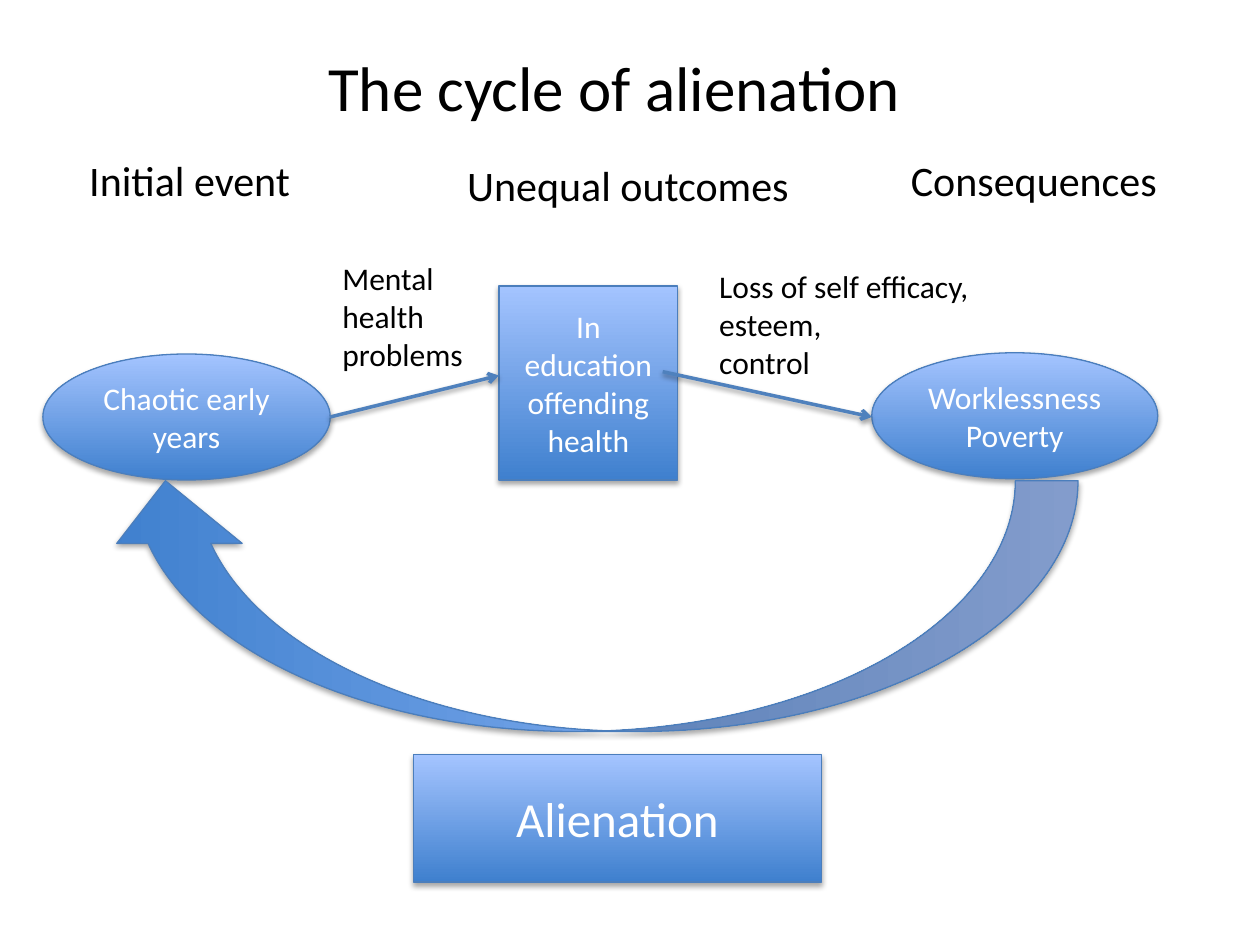
"""Build the slide on the cycle of alienation."""
from lxml.etree import SubElement
from pptx import Presentation
from pptx.dml.color import RGBColor
from pptx.enum.shapes import MSO_CONNECTOR, MSO_SHAPE
from pptx.enum.text import MSO_ANCHOR, PP_ALIGN
from pptx.oxml.ns import qn
from pptx.util import Pt

COLORS = {"text": "000000", "label": "FFFFFF", "dark": "3F80CE", "light": "A4C4FF",
          "outline": "4B7EBC", "link": "4F81BD", "shadow": "000000"}
FONT = "Calibri"

TITLE = ("The cycle of alienation", (36, 4.3, 648, 90))
HEADINGS = [
    ("Initial event", (43.9, 85, 131, 36)),
    ("Unequal outcomes", (259.9, 87.8, 200.9, 36)),
    ("Consequences", (513.4, 85, 160.6, 36)),
]
CAUSES = [
    (["Mental health problems"], (188.6, 144.7, 83.5, 72.7)),
    (["Loss of self efficacy, esteem,", "control"], (403.9, 149, 171.4, 72.7)),
]
STAGES = [
    (MSO_SHAPE.OVAL, ["Worklessness\vPoverty"], 18, (498.2, 201.6, 163.4, 72)),
    (MSO_SHAPE.RECTANGLE, ["In education offending", "health"], 18, (285.1, 163.4, 102.2, 110.9)),
    (MSO_SHAPE.OVAL, ["Chaotic early years"], 18, (24.5, 202.3, 164.2, 72)),
    (MSO_SHAPE.RECTANGLE, ["Alienation"], 28, (236.2, 431.3, 233.3, 72.7)),
]
RETURN_ARROW = (265.7, 67.7, 143.3, 557.3)
LINKS = [(378.7, 212.4, 498.2, 238.3), (188.6, 238.3, 285.1, 214.6)]


def points(values):
    return [Pt(value) for value in values]


def color(name):
    return RGBColor.from_string(COLORS[name])


def write(frame, paragraphs, size=18, fill="text", align=PP_ALIGN.LEFT, anchor=MSO_ANCHOR.TOP):
    frame.word_wrap = True
    frame.vertical_anchor = anchor
    for index, content in enumerate(paragraphs):
        paragraph = frame.add_paragraph() if index else frame.paragraphs[0]
        paragraph.text = content
        paragraph.alignment = align
        for run in paragraph.runs:
            run.font.name = FONT
            run.font.size = Pt(size)
            run.font.color.rgb = color(fill)


def add_text(slide, paragraphs, box, **style):
    frame = slide.shapes.add_textbox(*points(box)).text_frame
    write(frame, paragraphs, **style)
    return frame


def add_shadow(shape, distance, opacity):
    effects = SubElement(shape.element.spPr, qn("a:effectLst"))
    outer = SubElement(effects, qn("a:outerShdw"), blurRad=str(Pt(3.1)), dist=str(Pt(distance)),
                       dir="5400000", rotWithShape="0")
    tint = SubElement(outer, qn("a:srgbClr"), val=COLORS["shadow"])
    SubElement(tint, qn("a:alpha"), val=str(opacity * 1000))


def add_block(slide, kind, box):
    block = slide.shapes.add_shape(kind, *points(box))
    block.fill.gradient()
    block.fill.gradient_angle = 90
    for stop, name in zip(block.fill.gradient_stops, ("dark", "light")):
        stop.color.rgb = color(name)
    block.line.color.rgb = color("outline")
    block.line.width = Pt(0.75)
    add_shadow(block, 1.8, 35)
    return block


def add_link(slide, ends):
    link = slide.shapes.add_connector(MSO_CONNECTOR.STRAIGHT, *points(ends))
    link.line.color.rgb = color("link")
    link.line.width = Pt(2)
    SubElement(link.line._get_or_add_ln(), qn("a:tailEnd"), type="arrow")
    add_shadow(link, 1.6, 38)


def main():
    deck = Presentation()
    deck.slide_width, deck.slide_height = Pt(720), Pt(540)
    slide = deck.slides.add_slide(deck.slide_layouts[6])

    title, title_box = TITLE
    heading_frame = add_text(slide, [title], title_box, size=36,
                             align=PP_ALIGN.CENTER, anchor=MSO_ANCHOR.MIDDLE)
    heading_frame.margin_right = Pt(25.2)

    for kind, paragraphs, size, box in STAGES:
        stage = add_block(slide, kind, box)
        write(stage.text_frame, paragraphs, size=size, fill="label",
              align=PP_ALIGN.CENTER, anchor=MSO_ANCHOR.MIDDLE)
    add_block(slide, MSO_SHAPE.CURVED_LEFT_ARROW, RETURN_ARROW).rotation = 90
    for ends in LINKS:
        add_link(slide, ends)
    for heading, box in HEADINGS:
        add_text(slide, [heading], box, size=24)
    for paragraphs, box in CAUSES:
        add_text(slide, paragraphs, box)

    deck.save("out.pptx")


if __name__ == "__main__":
    main()
